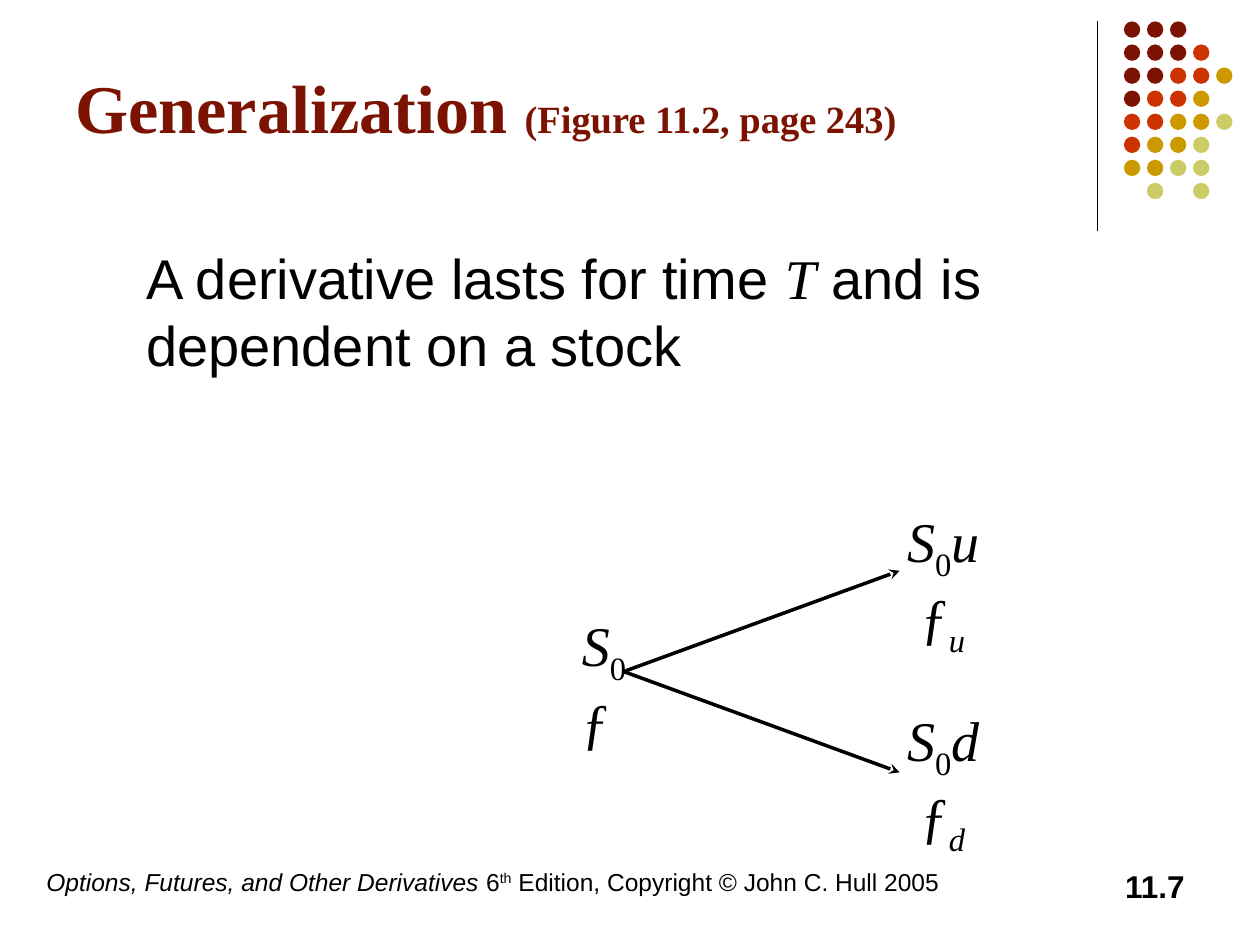
from lxml import etree
from pptx import Presentation
from pptx.dml.color import RGBColor
from pptx.enum.shapes import MSO_CONNECTOR, MSO_SHAPE
from pptx.enum.text import MSO_ANCHOR, PP_ALIGN
from pptx.oxml.ns import qn
from pptx.util import Inches, Pt

STRAIGHT = MSO_CONNECTOR.STRAIGHT
OVAL = MSO_SHAPE.OVAL
TOP, MIDDLE = MSO_ANCHOR.TOP, MSO_ANCHOR.MIDDLE
LEFT, RIGHT = PP_ALIGN.LEFT, PP_ALIGN.RIGHT

COLORS = {"black": "000000", "maroon": "7C1302", "red": "CC3300",
          "gold": "CC9900", "lime": "CCCC66"}
SANS, SERIF = "Arial", "Times New Roman"
COLUMNS, ROWS = 100, 75
CELL = Inches(10) / COLUMNS

DOT_ROWS = ["MMM", "MMMR", "MMRRG", "MRRG", "RRGGL", "RGGL", "GGLL", " L L"]
DOT_COLORS = {"M": "maroon", "R": "red", "G": "gold", "L": "lime"}
DOT_LEFT, DOT_TOP, DOT_SIZE, DOT_PITCH = 89.2, 1.7, 1.3, 1.83

ITALIC = {"italic": True}
SUBSCRIPT = {"baseline": -25}
ITALIC_SUBSCRIPT = {"italic": True, "baseline": -25}


def cells(*counts):
    """Turn counts of grid cells into slide lengths."""
    return [round(count * CELL) for count in counts]


def color(name):
    """Look up a named colour."""
    return RGBColor.from_string(COLORS[name])


def add_span(para, text, italic=None, size=None, name=None, baseline=None):
    """Append a span of text with its own variations."""
    span = para.add_run()
    span.text = text
    if italic:
        span.font.italic = True
    if size:
        span.font.size = Pt(size)
    if name:
        span.font.name = name
    if baseline:
        span.font._element.set("baseline", str(baseline * 1000))


def add_text(page, place, paragraphs, size, name=SANS, ink="black", bold=False,
             align=LEFT, anchor=TOP, wrap=True):
    """Add a text box whose paragraphs are lists of (text, style) spans."""
    frame = page.shapes.add_textbox(*cells(*place)).text_frame
    frame.word_wrap = wrap
    frame.vertical_anchor = anchor
    for index, spans in enumerate(paragraphs):
        para = frame.add_paragraph() if index else frame.paragraphs[0]
        para.alignment = align
        para.font.size = Pt(size)
        para.font.name = name
        para.font.bold = bold
        para.font.color.rgb = color(ink)
        for text, style in spans:
            add_span(para, text, **style)
    return frame


def add_line(page, start, end, width, arrow=False):
    """Draw a straight black line, with a stealth arrowhead if asked."""
    line = page.shapes.add_connector(STRAIGHT, *cells(*start, *end))
    line.line.color.rgb = color("black")
    line.line.width = Pt(width)
    if arrow:
        etree.SubElement(line.line._get_or_add_ln(), qn("a:tailEnd"), type="stealth")
    etree.SubElement(line._element.spPr, qn("a:effectLst"))


def add_dots(page):
    """Lay out the coloured dots of the corner ornament."""
    for row, codes in enumerate(DOT_ROWS):
        for column, code in enumerate(codes):
            if code == " ":
                continue
            dot = page.shapes.add_shape(OVAL, *cells(
                DOT_LEFT + column * DOT_PITCH, DOT_TOP + row * DOT_PITCH,
                DOT_SIZE, DOT_SIZE))
            dot.shadow.inherit = False
            dot.fill.solid()
            dot.fill.fore_color.rgb = color(DOT_COLORS[code])
            dot.line.fill.background()


def add_node(page, place, move="", indent=0):
    """Label a tree node with its stock price and derivative value."""
    price = [("S", ITALIC), ("0", SUBSCRIPT)]
    value = [("ƒ", {})]
    if move:
        price.append((move, ITALIC))
        value.append((move, ITALIC_SUBSCRIPT))
    frame = add_text(page, place, [price, value], 32, SERIF, wrap=False)
    if indent:
        properties = frame.paragraphs[1]._p.get_or_add_pPr()
        properties.set("marL", str(cells(indent)[0]))


def add_tree(page):
    """Draw the one-step binomial tree."""
    root = (49.5, 53.3)
    for move, tip, top in (("u", 45.3, 39.7), ("d", 61.3, 55.5)):
        add_line(page, root, (71.4, tip), 2, arrow=True)
        add_node(page, (71, top, 7.9, 11.7), move, indent=1.1)
    add_node(page, (45.2, 48, 5.7, 11.7))


def main():
    """Build the slide and save it."""
    deck = Presentation()
    deck.slide_width, deck.slide_height = cells(COLUMNS, ROWS)
    page = deck.slides.add_slide(deck.slide_layouts[6])
    add_line(page, (87.1, 1.7), (87.1, 18.3), 0.75)
    add_dots(page)
    add_text(page, (2.7, 68.3, 82.7, 5), [[
        ("Options, Futures, and Other Derivatives", ITALIC), (" 6", {}),
        ("th", {"baseline": 30}),
        (" Edition, Copyright © John C. Hull 2005", {})]], 14)
    add_text(page, (71.7, 68.3, 23.3, 5), [[("11.7", {})]], 18, bold=True, align=RIGHT)
    add_text(page, (5, 1.3, 82.5, 14.2), [[
        ("Generalization ", {"size": 39}), ("(Figure 11.2, page 243)", {"size": 22})]],
        39, SERIF, "maroon", bold=True, anchor=MIDDLE)
    body = add_text(page, (6.8, 18.8, 86.5, 48.2), [[
        ("A derivative lasts for time ", {}), ("T", {"italic": True, "name": SERIF}),
        (" and is dependent on a stock", {})]], 32)
    body.margin_left = cells(4.8)[0]
    add_tree(page)
    deck.save("out.pptx")


if __name__ == "__main__":
    main()
